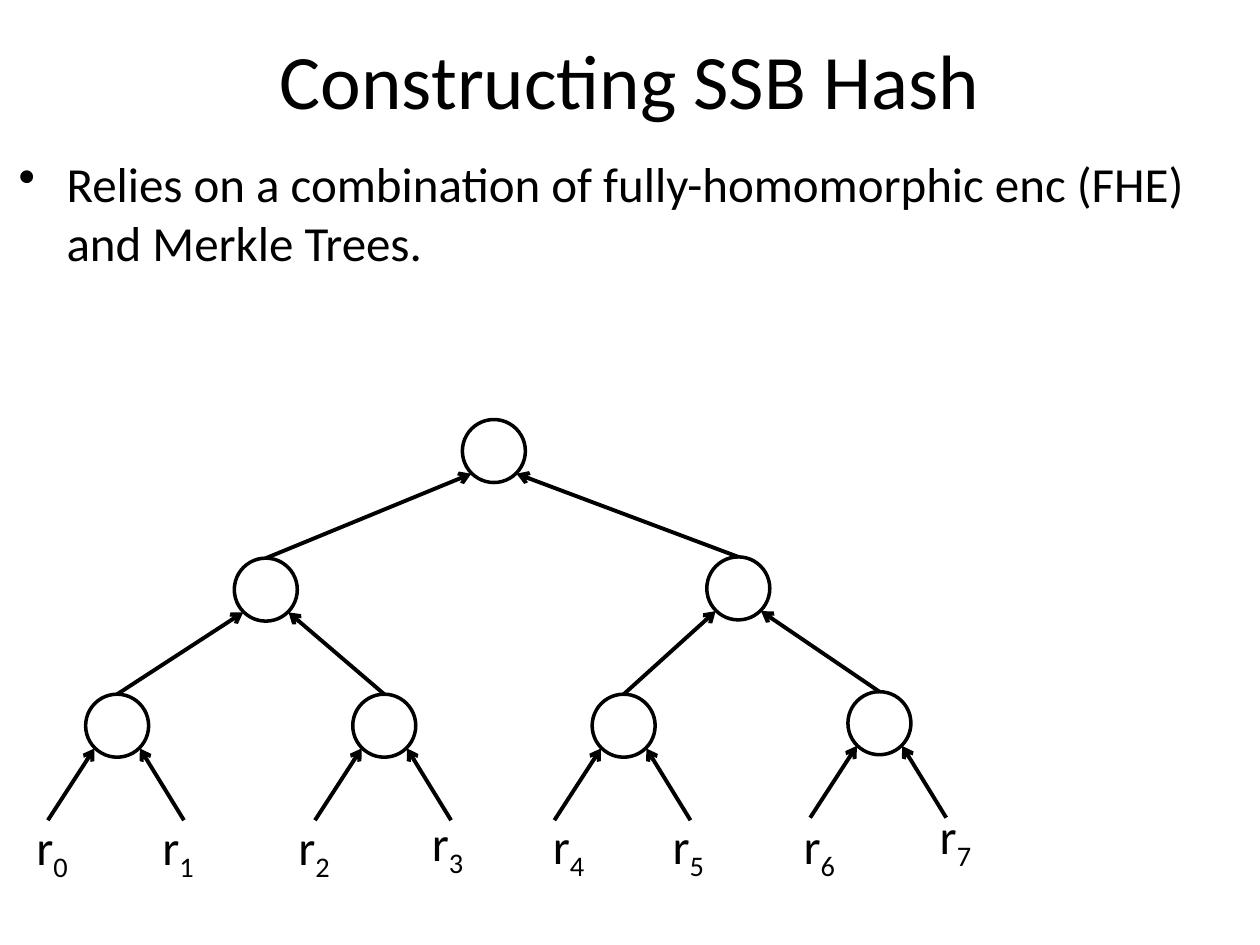
import pptx
import pptx.util
import pptx.dml.color
import pptx.enum.shapes
import pptx.enum.text
import pptx.oxml.ns
import lxml.etree

Inches, Pt = pptx.util.Inches, pptx.util.Pt
COLORS = {"ink": "000000"}
FONT = "Calibri"

TITLE = "Constructing SSB Hash"
POINT = "Relies on a combination of fully-homomorphic enc (FHE) and Merkle Trees."
# Tree nodes level by level (left, top): node i has children 2i+1 and 2i+2
NODES = [
    (3.67, 3.33),
    (1.86, 4.43), (5.61, 4.42),
    (0.68, 5.51), (2.8, 5.51), (4.7, 5.51), (6.73, 5.49),
]
SIZE = 0.5
# Label places (left, top) for r0 to r7
LABELS = [(0.19, 6.43), (1.19, 6.43), (2.27, 6.43), (3.33, 6.4),
          (4.29, 6.42), (5.24, 6.42), (6.28, 6.42), (7.36, 6.34)]
# Start of the two leaf arrows, relative to their node's left and top
LEAVES = [(-0.3, 1), (0.78, 1)]
# Arrow tips on the lower left and lower right of a node
TIPS = [(0.07, 0.43), (0.43, 0.43)]


def ink():
    return pptx.dml.color.RGBColor.from_string(COLORS["ink"])


def style(font, size):
    font.name, font.size = FONT, Pt(size)
    font.color.rgb = ink()


def add_node(slide, left, top):
    node = slide.shapes.add_shape(
        pptx.enum.shapes.MSO_SHAPE.OVAL,
        Inches(left), Inches(top), Inches(SIZE), Inches(SIZE))
    node.shadow.inherit = False
    node.fill.background()
    node.line.color.rgb = ink()
    node.line.width = Pt(2)
    return node


def add_arrow(slide, start, end):
    arrow = slide.shapes.add_connector(
        pptx.enum.shapes.MSO_CONNECTOR.STRAIGHT,
        *[Inches(n) for n in (*start, *end)])
    arrow.line.color.rgb = ink()
    arrow.line.width = Pt(2.25)
    qn = pptx.oxml.ns.qn
    lxml.etree.SubElement(arrow.line._get_or_add_ln(), qn("a:tailEnd"), type="arrow")
    lxml.etree.SubElement(arrow._element.spPr, qn("a:effectLst"))


def add_text(slide, left, top, width, height, wrap):
    box = slide.shapes.add_textbox(*[Inches(n) for n in (left, top, width, height)])
    box.text_frame.word_wrap = wrap
    para = box.text_frame.paragraphs[0]
    style(para.font, 28)
    return para


def main():
    deck = pptx.Presentation()
    deck.slide_width, deck.slide_height = Inches(10), Inches(7.5)
    slide = deck.slides.add_slide(deck.slide_layouts[5])

    # Title
    title = slide.shapes.title
    title.left, title.top = Inches(0.5), Inches(0)
    title.width, title.height = Inches(9), Inches(1.25)
    title.text_frame.text = TITLE
    title.text_frame.vertical_anchor = pptx.enum.text.MSO_ANCHOR.MIDDLE
    para = title.text_frame.paragraphs[0]
    para.alignment = pptx.enum.text.PP_ALIGN.CENTER
    style(para.font, 44)

    # Bullet point
    para = add_text(slide, 0.05, 1.17, 9.95, 1.92, True)
    para.add_run().text = POINT
    para.space_before = Pt(5.6)
    props = para._p.get_or_add_pPr()
    props.set("marL", str(Inches(0.38)))
    props.set("indent", str(-Inches(0.38)))
    bullet = lxml.etree.Element(pptx.oxml.ns.qn("a:buChar"), char="•")
    props.find(pptx.oxml.ns.qn("a:spcBef")).addnext(bullet)

    # Tree: each node takes an arrow from each child, or from each leaf
    for i, (left, top) in enumerate(NODES):
        for side, (dx, dy) in enumerate(TIPS):
            child = 2 * i + 1 + side
            if child < len(NODES):
                x, y = NODES[child]
                start = (x + SIZE / 2, y)
            else:
                x, y = LEAVES[side]
                start = (left + x, top + y)
            add_arrow(slide, start, (left + dx, top + dy))
        add_node(slide, left, top)

    # Leaf labels
    for i, (left, top) in enumerate(LABELS):
        para = add_text(slide, left, top, 0.47, 0.57, False)
        para.add_run().text = "r"
        sub = para.add_run()
        sub.text = str(i)
        sub.font._element.set("baseline", "-25000")

    deck.save("out.pptx")


if __name__ == "__main__":
    main()
